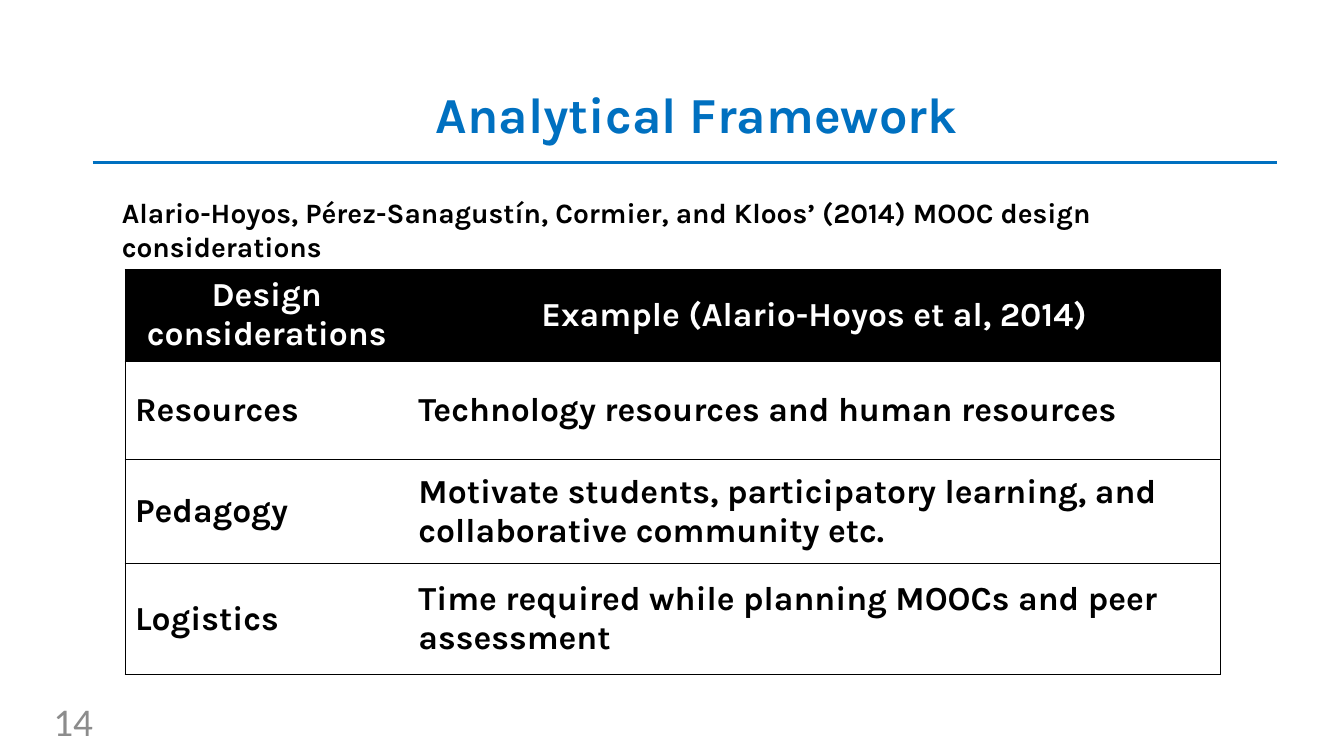
from lxml.etree import SubElement
from pptx import Presentation
from pptx.dml.color import RGBColor
from pptx.enum.shapes import MSO_CONNECTOR
from pptx.enum.text import MSO_ANCHOR, PP_ALIGN
from pptx.oxml.ns import qn
from pptx.util import Inches, Pt

COLORS = {"blue": "0070C0", "black": "000000", "white": "FFFFFF", "gray": "8C8C8C"}
COLS = [2.81, 8.05]
HEIGHTS = [0.91, 0.98, 1.03, 1.1]
ROWS = [
    ("Design considerations", "Example (Alario-Hoyos et al, 2014)"),
    ("Resources", "Technology resources and human resources"),
    ("Pedagogy", "Motivate students, participatory learning, and collaborative community etc."),
    ("Logistics", "Time required while planning MOOCs and peer assessment"),
]


def color(name):
    return RGBColor.from_string(COLORS[name])


def place(shape, box):
    shape.left, shape.top, shape.width, shape.height = map(Inches, box)


def write(frame, text, size=24, font="Karla", ink="black", bold=True,
          align=PP_ALIGN.LEFT, anchor=MSO_ANCHOR.MIDDLE, spacing=None):
    frame.word_wrap = True
    frame.vertical_anchor = anchor
    para = frame.paragraphs[0]
    para.alignment = align
    para.line_spacing = spacing
    run = para.add_run()
    run.text = text
    run.font.size = Pt(size)
    run.font.name = font
    run.font.bold = bold
    run.font.color.rgb = color(ink)


def add_title(slide, box):
    title = slide.shapes.title
    place(title, box)
    write(title.text_frame, "Analytical Framework", size=36, ink="blue",
          align=PP_ALIGN.CENTER, spacing=0.9)


def add_rule(slide, left, top, width):
    rule = slide.shapes.add_connector(
        MSO_CONNECTOR.STRAIGHT, Inches(left), Inches(top), Inches(left + width), Inches(top))
    rule.line.color.rgb = color("blue")
    rule.line.width = Pt(2)
    SubElement(rule._element.spPr, qn("a:effectLst"))


def add_text(slide, box, text, **style):
    shape = slide.shapes.add_textbox(*map(Inches, box))
    write(shape.text_frame, text, **style)


def set_borders(cell, sides):
    """Draw a thin black line on the given sides and clear the others."""
    props = cell._tc.get_or_add_tcPr()
    for side in "LRTB":
        line = SubElement(props, qn("a:ln" + side), w=str(Pt(0.5)))
        if side in sides:
            fill = SubElement(line, qn("a:solidFill"))
            SubElement(fill, qn("a:srgbClr"), val=COLORS["black"])
        else:
            SubElement(line, qn("a:noFill"))


def add_grid(slide, left, top):
    frame = slide.shapes.add_table(
        len(ROWS), len(COLS), Inches(left), Inches(top),
        Inches(sum(COLS)), Inches(sum(HEIGHTS)))
    table = frame.table
    table.horz_banding = False
    for col, width in zip(table.columns, COLS):
        col.width = Inches(width)
    for r, (row, height, texts) in enumerate(zip(table.rows, HEIGHTS, ROWS)):
        row.height = Inches(height)
        head = r == 0
        for c, (cell, text) in enumerate(zip(row.cells, texts)):
            set_borders(cell, "LTB" if c == 0 else "RTB")
            cell.fill.solid()
            cell.fill.fore_color.rgb = color("black" if head else "white")
            cell.vertical_anchor = MSO_ANCHOR.MIDDLE
            write(cell.text_frame, text, ink="white" if head else "black",
                  align=PP_ALIGN.CENTER if head else PP_ALIGN.LEFT)


def main():
    deck = Presentation()
    deck.slide_width, deck.slide_height = Inches(13.33), Inches(7.5)
    slide = deck.slides.add_slide(deck.slide_layouts[5])
    add_title(slide, (0.7, 0.44, 12.42, 1.45))
    add_rule(slide, 0.92, 1.61, 11.75)
    add_text(slide, (1.11, 1.89, 11.4, 0.77),
             "Alario-Hoyos, Pérez-Sanagustín, Cormier, and Kloos’ (2014) MOOC design considerations",
             size=20, anchor=MSO_ANCHOR.TOP)
    add_grid(slide, 1.24, 2.67)
    add_text(slide, (0, 6.95, 1.02, 0.4), "14", size=28, font="Calibri",
             ink="gray", bold=False, align=PP_ALIGN.RIGHT)
    deck.save("out.pptx")


if __name__ == "__main__":
    main()
